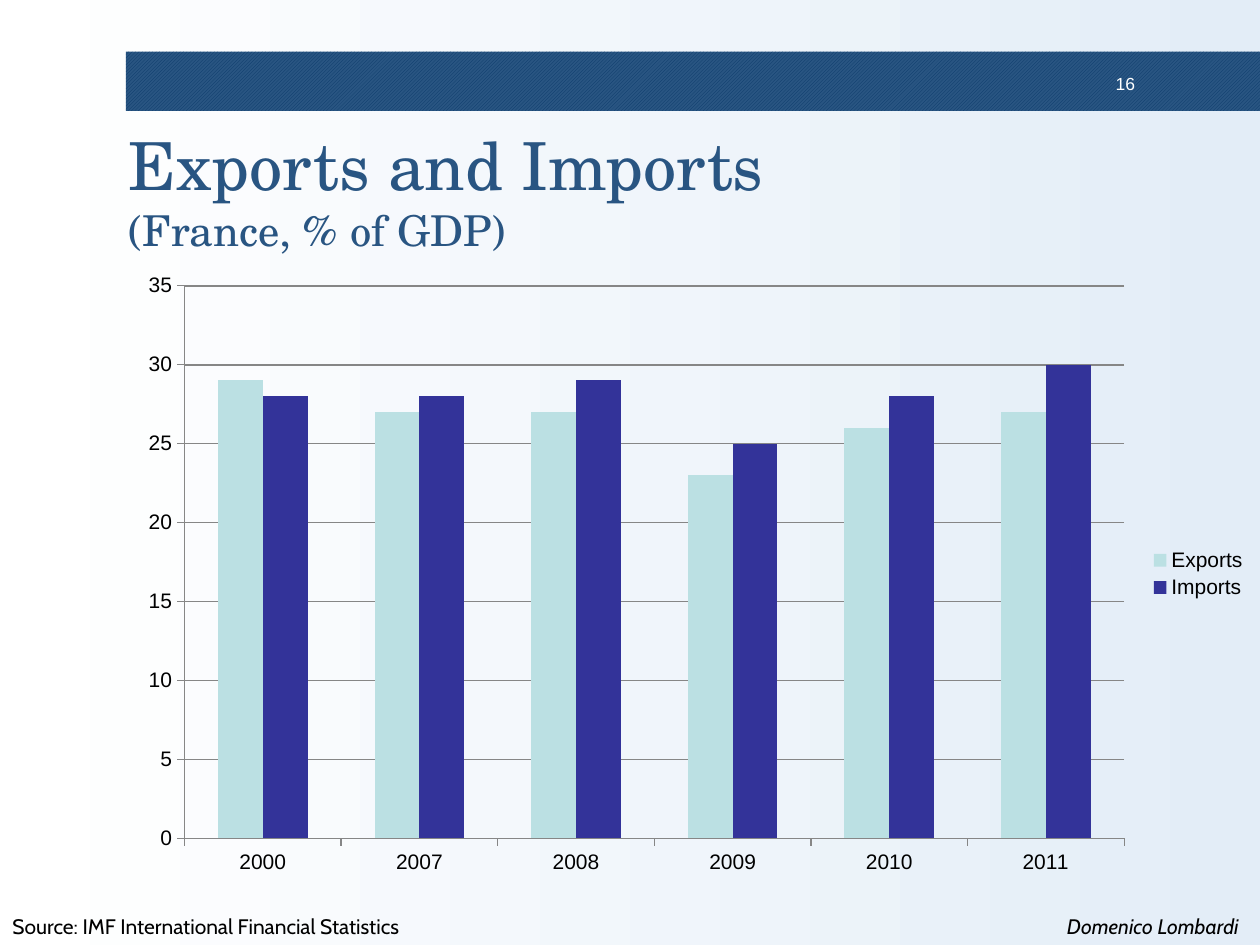
from pptx import Presentation
from pptx import util as u
from pptx.chart import data as cd
from pptx.dml import color as dc
from pptx.enum import chart as ch, dml, text

W, H = 10, 7.5
COLORS = {"white": "FFFFFF", "mist": "E3EDF7", "navy": "295582", "hatch": "083868",
          "black": "000000", "grid": "868686", "Exports": "BBE0E3", "Imports": "333399"}
YEARS = ["2000", "2007", "2008", "2009", "2010", "2011"]
SERIES = {"Exports": [29, 27, 27, 23, 26, 27], "Imports": [28, 28, 29, 25, 28, 30]}


def rgb(name):
    """Return the named palette colour."""
    return dc.RGBColor.from_string(COLORS[name])


def inches(*box):
    """Convert a box in inches to lengths."""
    return [u.Inches(v) for v in box]


def style(font, size, color, name="Arial", italic=None):
    """Format a font."""
    font.size, font.name, font.italic = u.Pt(size), name, italic
    font.color.rgb = rgb(color)


def add_label(slide, box, words, size, color, name, align, italic=None, wrap=False):
    """Add a one-line text box."""
    tf = slide.shapes.add_textbox(*inches(*box)).text_frame
    tf.word_wrap = wrap
    p = tf.paragraphs[0]
    p.text, p.alignment = words, align
    style(p.font, size, color, name, italic)
    return tf


def add_background(slide):
    """Fill the slide with a left-to-right gradient."""
    fill = slide.background.fill
    fill.gradient()
    fill.gradient_angle = 0
    for stop, name, pos in zip(fill.gradient_stops, ("white", "mist"), (0, 1)):
        stop.color.rgb, stop.position = rgb(name), pos


def add_band(slide, box):
    """Add the hatched band with the slide number."""
    x, y, w, h = box
    sp = slide.shapes.add_shape(1, *inches(*box))
    sp.shadow.inherit = False
    sp.line.fill.background()
    sp.fill.patterned()
    sp.fill.pattern = dml.MSO_PATTERN.LIGHT_UPWARD_DIAGONAL
    sp.fill.fore_color.rgb, sp.fill.back_color.rgb = rgb("hatch"), rgb("navy")
    num = (x + w * 0.852, y + h * 0.28, 0.41, 0.23)
    tf = add_label(slide, num, "16", 10, "white", "Arial", text.PP_ALIGN.RIGHT, wrap=True)
    tf.margin_left = tf.margin_right = u.Inches(0.07)
    tf.margin_top = tf.margin_bottom = u.Inches(0.04)


def add_title(slide, box):
    """Place the title with its smaller second line."""
    sp = slide.shapes.title
    sp.left, sp.top, sp.width, sp.height = inches(*box)
    tf = sp.text_frame
    tf.vertical_anchor = text.MSO_ANCHOR.MIDDLE
    tf.auto_size = text.MSO_AUTO_SIZE.NONE
    tf.margin_left = tf.margin_right = tf.margin_top = tf.margin_bottom = u.Inches(0.04)
    p = tf.paragraphs[0]
    p.alignment = text.PP_ALIGN.LEFT
    style(p.font, 37.8, "navy", "TeX Gyre Schola")
    p.add_run().text = "Exports and Imports"
    p.add_line_break()
    r = p.add_run()
    r.text, r.font.size = "(France, % of GDP)", u.Pt(24.3)


def add_trade_chart(slide, box):
    """Add the clustered columns of exports and imports."""
    data = cd.CategoryChartData()
    data.categories = YEARS
    for name, values in SERIES.items():
        data.add_series(name, values)
    kind = ch.XL_CHART_TYPE.COLUMN_CLUSTERED
    chart = slide.shapes.add_chart(kind, *inches(*box), data).chart
    style(chart.font, 16, "black")
    chart.has_title = False
    chart.has_legend = True
    chart.legend.position = ch.XL_LEGEND_POSITION.RIGHT
    chart.legend.include_in_layout = False
    style(chart.legend.font, 12, "black")
    plot = chart.plots[0]
    plot.gap_width, plot.overlap, plot.vary_by_categories = 150, 0, False
    for series in plot.series:
        series.format.fill.solid()
        series.format.fill.fore_color.rgb = rgb(series.name)
    for axis in (chart.category_axis, chart.value_axis):
        axis.major_tick_mark = ch.XL_TICK_MARK.OUTSIDE
        style(axis.tick_labels.font, 12, "black")
        axis.format.line.color.rgb, axis.format.line.width = rgb("grid"), u.Pt(0.75)
    axis = chart.value_axis
    axis.minimum_scale, axis.maximum_scale, axis.major_unit = 0, 35, 5
    line = axis.major_gridlines.format.line
    line.color.rgb, line.width = rgb("grid"), u.Pt(1)


def add_footer(slide, box):
    """Add the source on the left and the author on the right."""
    x, y, w, h = box
    add_label(slide, (x, y, w * 0.353, h), "Source: IMF International Financial Statistics",
              12, "black", "Cabin", text.PP_ALIGN.LEFT)
    add_label(slide, (x + w * 0.83, y, w * 0.17, h), "Domenico Lombardi",
              12, "black", "Cabin", text.PP_ALIGN.CENTER, True)


def main():
    """Build and save the slide."""
    prs = Presentation()
    prs.slide_width, prs.slide_height = inches(W, H)
    slide = prs.slides.add_slide(prs.slide_layouts[5])
    add_background(slide)
    add_band(slide, (1, 0.41, W - 1, 0.47))
    add_title(slide, (0.98, 0.94, 8.05, 1.13))
    add_trade_chart(slide, (1, 2.08, W - 1, 4.95))
    add_footer(slide, (0, H - 0.3, W, 0.3))
    prs.save("out.pptx")


if __name__ == "__main__":
    main()
